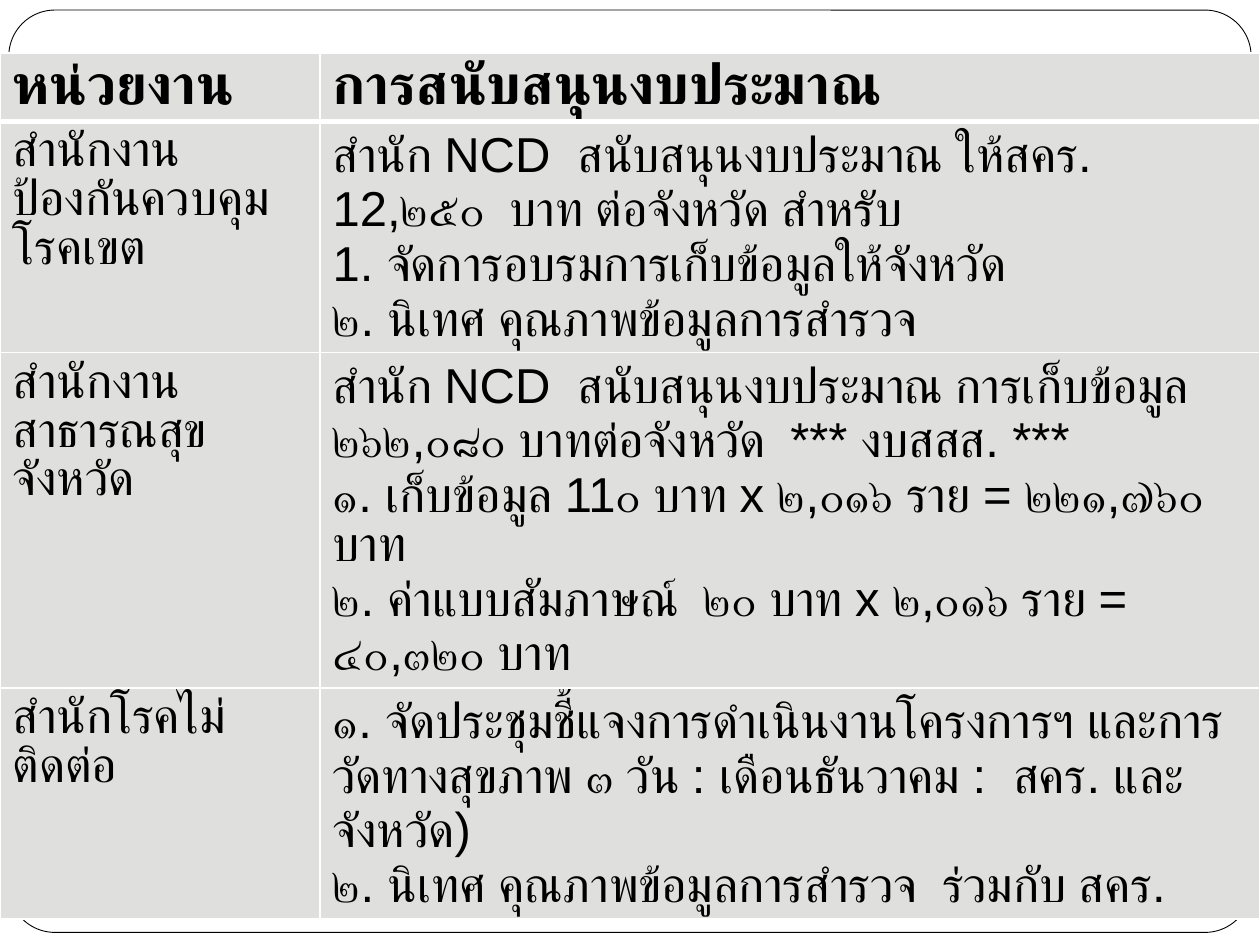
from pptx import Presentation
from pptx.dml.color import RGBColor
from pptx.enum.shapes import MSO_SHAPE
from pptx.oxml.ns import qn
from pptx.util import Inches, Pt
from lxml.etree import SubElement

COLORS = {"text": "000000", "cell": "DFDFDD", "paper": "FFFFFF", "frame": "000000"}
FONT = "Arial"
HEADER_SIZE, BODY_SIZE = 32, 28
COL_WIDTHS = [2.54, 7.46]
RIGHT_MARGINS = [0.15, 0.1]
ROW_HEIGHTS = [0.53, 1.83, 2.66, 1.83]

# Each cell is a list of paragraphs; the first row is the header.
ROWS = [
    (["หน่วยงาน"], ["การสนับสนุนงบประมาณ"]),
    (["สำนักงานป้องกันควบคุมโรคเขต"],
     ["สำนัก NCD  สนับสนุนงบประมาณ ให้สคร. 12,๒๕๐  บาท ต่อจังหวัด สำหรับ",
      "1. จัดการอบรมการเก็บข้อมูลให้จังหวัด",
      "๒. นิเทศ คุณภาพข้อมูลการสำรวจ"]),
    (["สำนักงานสาธารณสุขจังหวัด"],
     ["สำนัก NCD  สนับสนุนงบประมาณ การเก็บข้อมูล  ๒๖๒,๐๘๐ บาทต่อจังหวัด  *** งบสสส. ***",
      "๑. เก็บข้อมูล 11๐ บาท x ๒,๐๑๖ ราย = ๒๒๑,๗๖๐ บาท",
      "๒. ค่าแบบสัมภาษณ์  ๒๐ บาท x ๒,๐๑๖ ราย = ๔๐,๓๒๐ บาท"]),
    (["สำนักโรคไม่ติดต่อ"],
     ["๑. จัดประชุมชี้แจงการดำเนินงานโครงการฯ และการวัดทางสุขภาพ ๓ วัน : "
      "เดือนธันวาคม :  สคร. และ จังหวัด)",
      "๒. นิเทศ คุณภาพข้อมูลการสำรวจ  ร่วมกับ สคร."]),
]


def rgb(name):
    return RGBColor.from_string(COLORS[name])


def set_borders(cell, widths):
    """Draw the cell borders; widths maps L, R, T, B to points."""
    tc_pr = cell._tc.get_or_add_tcPr()
    for i, (side, width) in enumerate(widths.items()):
        ln = SubElement(tc_pr, qn(f"a:ln{side}"), w=str(Pt(width)))
        fill = SubElement(ln, qn("a:solidFill"))
        SubElement(fill, qn("a:srgbClr"), val=COLORS["paper"])
        tc_pr.insert(i, ln)  # borders come before the cell fill


def fill_cell(cell, paragraphs, row):
    header = row == 0
    cell.fill.solid()
    cell.fill.fore_color.rgb = rgb("cell")
    set_borders(cell, {"L": 1, "R": 1, "T": 3 if row == 1 else 1, "B": 3 if header else 1})
    tf = cell.text_frame
    tf.text = "\n".join(paragraphs)
    for p in tf.paragraphs:
        for r in p.runs:
            r.font.name = FONT
            r.font.size = Pt(HEADER_SIZE if header else BODY_SIZE)
            r.font.bold = header
            r.font.color.rgb = rgb("text")


def add_frame(slide):
    s = slide.shapes.add_shape(MSO_SHAPE.ROUNDED_RECTANGLE, Inches(0.07), Inches(0.08),
                               Inches(9.86), Inches(7.32))
    s.adjustments[0] = 0.05
    s.shadow.inherit = False
    s.fill.solid()
    s.fill.fore_color.rgb = rgb("paper")
    s.line.color.rgb = rgb("frame")
    s.line.width = Pt(0.5)


def add_budget_table(slide):
    table = slide.shapes.add_table(len(ROWS), len(COL_WIDTHS), Inches(0), Inches(0.42),
                                   Inches(sum(COL_WIDTHS)), Inches(sum(ROW_HEIGHTS))).table
    table.horz_banding = False
    for column, width in zip(table.columns, COL_WIDTHS):
        column.width = Inches(width)
    for row, height in zip(table.rows, ROW_HEIGHTS):
        row.height = Inches(height)
    for i, cells in enumerate(ROWS):
        for j, paragraphs in enumerate(cells):
            cell = table.cell(i, j)
            cell.margin_right = Inches(RIGHT_MARGINS[j])
            fill_cell(cell, paragraphs, i)


def main():
    prs = Presentation()
    prs.slide_width, prs.slide_height = Inches(10), Inches(7.5)
    slide = prs.slides.add_slide(prs.slide_layouts[6])
    add_frame(slide)
    add_budget_table(slide)
    prs.save("out.pptx")


if __name__ == "__main__":
    main()
